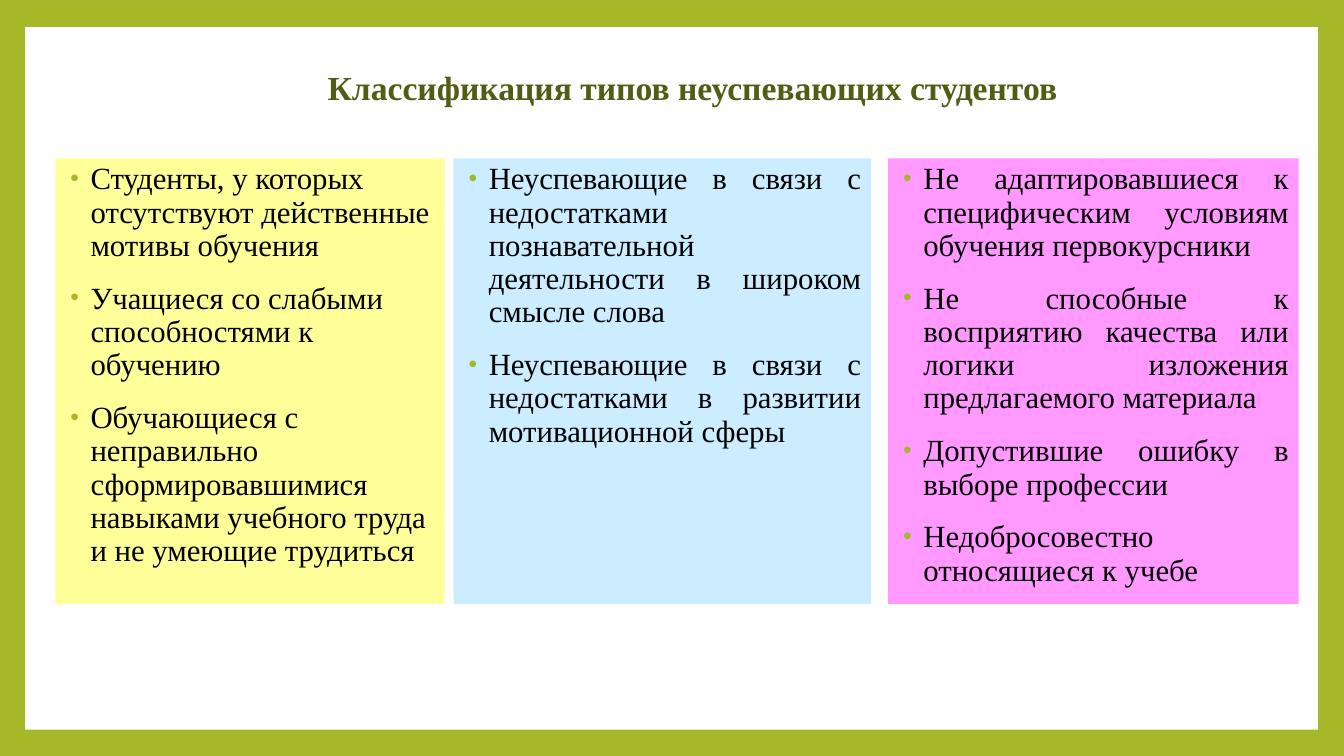
from lxml import etree
from pptx import Presentation
from pptx.dml.color import RGBColor
from pptx.enum import shapes, text
from pptx.oxml import ns
from pptx.util import Inches, Pt

GREEN = RGBColor(0xA6, 0xB7, 0x27)
OLIVE = RGBColor(0x53, 0x5C, 0x14)
WHITE = RGBColor(0xFF, 0xFF, 0xFF)
BLACK = RGBColor(0x00, 0x00, 0x00)
YELLOW = RGBColor(0xFF, 0xFF, 0x99)
BLUE = RGBColor(0xCC, 0xEC, 0xFF)
PINK = RGBColor(0xFF, 0x99, 0xFF)
FONT = "Times New Roman"
LEFT, JUSTIFY = text.PP_ALIGN.LEFT, text.PP_ALIGN.JUSTIFY

TITLE = "Классификация типов неуспевающих студентов "
COLUMNS = [
    (0.55, 3.86, YELLOW, LEFT, [
        "Студенты, у которых отсутствуют действенные мотивы обучения",
        "Учащиеся со слабыми способностями к обучению",
        "Обучающиеся с неправильно сформировавшимися навыками учебного труда "
        "и не умеющие трудиться",
    ]),
    (4.5, 4.14, BLUE, JUSTIFY, [
        "Неуспевающие в связи с недостатками познавательной деятельности "
        "в широком смысле слова",
        "Неуспевающие в связи с недостатками в развитии мотивационной сферы",
    ]),
    (8.81, 4.07, PINK, JUSTIFY, [
        "Не адаптировавшиеся к специфическим условиям обучения первокурсники",
        "Не способные к восприятию качества или логики изложения "
        "предлагаемого материала",
        "Допустившие ошибку в выборе профессии",
        "Недобросовестно относящиеся к учебе",
    ]),
]
COLUMN_TOP, COLUMN_HEIGHT = 1.57, 4.42


def add_box(s, left, top, width, height, color):
    """Add a plain filled rectangle."""
    sp = s.shapes.add_shape(shapes.MSO_SHAPE.RECTANGLE, Inches(left), Inches(top),
                            Inches(width), Inches(height))
    sp.shadow.inherit = False
    sp.fill.solid()
    sp.fill.fore_color.rgb = color
    sp.line.fill.background()
    return sp


def style(p, size, color, align, bold=False):
    """Format a paragraph and its runs."""
    p.alignment = align
    p.line_spacing = 0.9
    for r in p.runs:
        r.font.name = FONT
        r.font.size = Pt(size)
        r.font.bold = bold
        r.font.color.rgb = color


def add_bullet(p):
    """Give a paragraph a hanging green bullet."""
    pPr = p._p.get_or_add_pPr()
    pPr.set("marL", str(Inches(0.25)))
    pPr.set("indent", str(Inches(-0.2)))
    color = etree.SubElement(pPr, ns.qn("a:buClr"))
    etree.SubElement(color, ns.qn("a:srgbClr"), val=str(GREEN))
    etree.SubElement(pPr, ns.qn("a:buSzPct"), val="80000")
    etree.SubElement(pPr, ns.qn("a:buFont"), typeface="Arial")
    etree.SubElement(pPr, ns.qn("a:buChar"), char="•")


def add_column(s, left, width, color, align, items):
    """Add a coloured column with a bulleted list."""
    tf = add_box(s, left, COLUMN_TOP, width, COLUMN_HEIGHT, color).text_frame
    tf.word_wrap = True
    tf.vertical_anchor = text.MSO_ANCHOR.TOP
    tf.text = "\n".join(items)
    for p in tf.paragraphs:
        style(p, 22, BLACK, align)
        p.space_before = Pt(14)
        add_bullet(p)


def main():
    """Build the slide and save it."""
    prs = Presentation()
    prs.slide_width, prs.slide_height = Inches(13.33), Inches(7.5)
    s = prs.slides.add_slide(prs.slide_layouts[5])
    s.background.fill.solid()
    s.background.fill.fore_color.rgb = GREEN

    panel = add_box(s, 0.25, 0.27, 12.82, 6.97, WHITE)
    title = s.shapes.title
    title._element.addprevious(panel._element)
    title.left, title.top = Inches(1.51), Inches(0.55)
    title.width, title.height = Inches(10.8), Inches(0.67)
    tf = title.text_frame
    tf.text = TITLE
    tf.vertical_anchor = text.MSO_ANCHOR.MIDDLE
    tf.auto_size = text.MSO_AUTO_SIZE.NONE
    style(tf.paragraphs[0], 24, OLIVE, text.PP_ALIGN.CENTER, bold=True)

    for column in COLUMNS:
        add_column(s, *column)
    prs.save("out.pptx")


if __name__ == "__main__":
    main()
